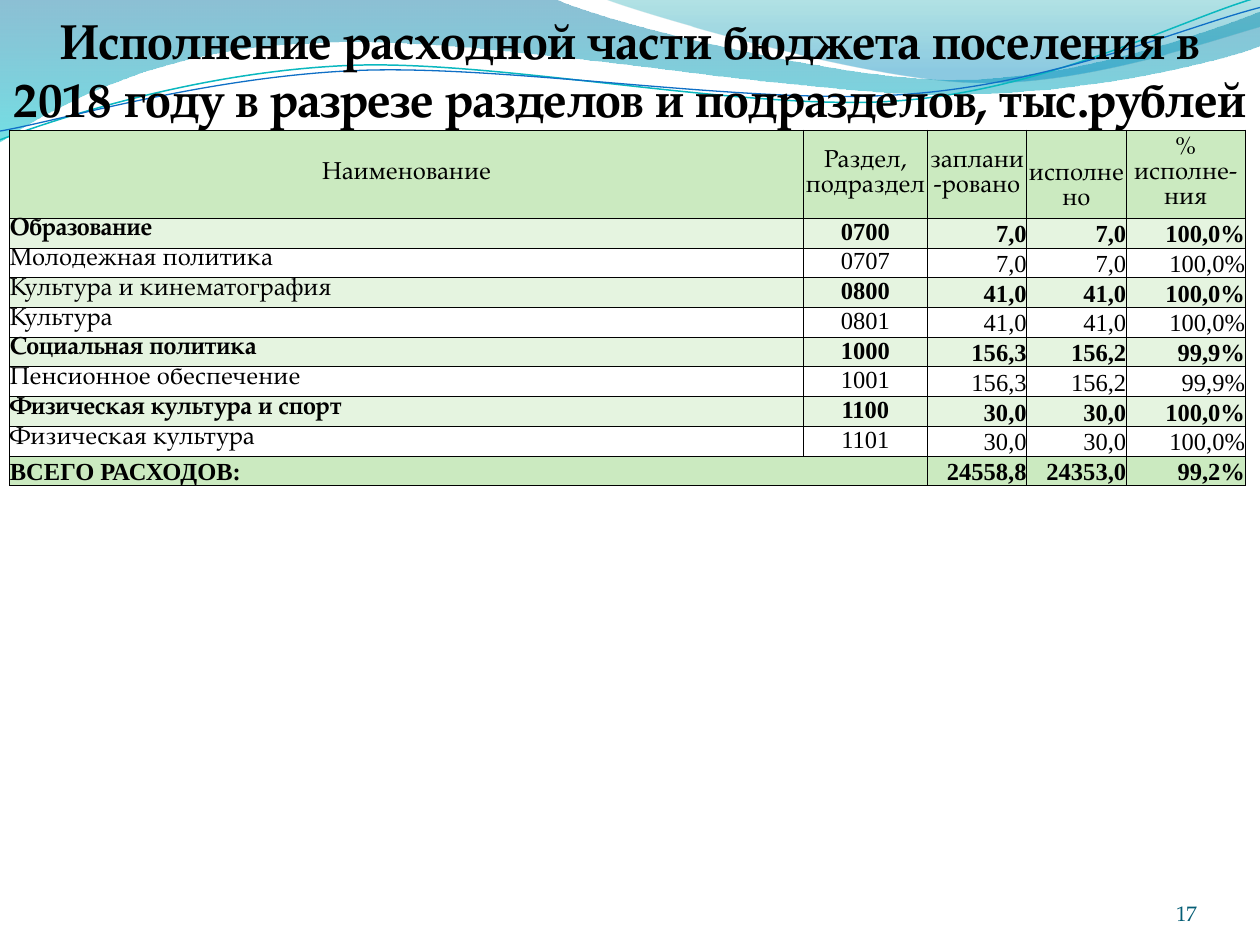
from math import cos, radians, sin

from lxml.etree import SubElement
from pptx import Presentation
from pptx.dml.color import RGBColor
from pptx.enum.text import MSO_ANCHOR, PP_ALIGN
from pptx.oxml.ns import qn
from pptx.util import Pt

HUES = {
    "ink": "000000", "head": "CBEAC0", "band": "E5F4E0", "page": "045D75",
    "deep": "0074A1", "aqua": "00C6CF", "teal": "00A1A9", "sky": "008BBF",
    "cyan": "0AB8BF", "blue": "0F6FC6",
}
SERIF, TIMES = "TeX Gyre Pagella", "Times New Roman"
LEFT, MID, RIGHT = PP_ALIGN.LEFT, PP_ALIGN.CENTER, PP_ALIGN.RIGHT
TOP, CORE, BASE = MSO_ANCHOR.TOP, MSO_ANCHOR.MIDDLE, MSO_ANCHOR.BOTTOM
TILT = -2.7


def put(item, **vals):
    for key, val in vals.items():
        setattr(item, key, val)


def hue(name):
    return RGBColor.from_string(HUES[name])


def turn(dot, hub, angle):
    x, y = dot[0] - hub[0], dot[1] - hub[1]
    c, s = cos(radians(angle)), sin(radians(angle))
    return hub[0] + x * c - y * s, hub[1] + x * s + y * c


class Deck:
    def __init__(self, wide, high):
        self.show = Presentation()
        put(self.show, slide_width=Pt(wide), slide_height=Pt(high))
        self.slide = self.show.slides.add_slide(self.show.slide_layouts[6])
        self.size = 14

    def free(self, start, parts, close):
        dots = [(Pt(x), Pt(y)) for x, y in [start, *sum(parts, [])]]
        pen = self.slide.shapes.build_freeform(*dots[0], scale=1.0)
        pen.add_line_segments(dots[1:], close=close)
        shape = pen.convert_to_shape()
        shape.shadow.inherit = False
        lines = iter(list(shape._element.spPr.iter(qn("a:lnTo"))))
        for part in parts:
            first = next(lines)
            if len(part) == 3:
                first.tag = qn("a:cubicBezTo")
                for _ in range(2):
                    line = next(lines)
                    first.append(line[0])
                    line.getparent().remove(line)
        return shape

    def wave(self, start, parts, stops):
        shape = self.free(start, parts, True)
        shape.line.fill.background()
        shape.fill.gradient()
        shape.fill.gradient_angle = 270
        for stop, (pos, name, alpha) in zip(shape.fill.gradient_stops, stops):
            stop.color.rgb = hue(name)
        nodes = shape._element.spPr.iter(qn("a:gs"))
        for node, (pos, name, alpha) in zip(nodes, stops):
            node.set("pos", str(pos * 1000))
            SubElement(node[0], qn("a:alpha")).set("val", str(alpha * 1000))

    def curl(self, start, parts, hub, name, width):
        flat = [[turn(dot, hub, -TILT) for dot in part] for part in parts]
        shape = self.free(turn(start, hub, -TILT), flat, False)
        shape.rotation = TILT
        shape.fill.background()
        shape.line.color.rgb = hue(name)
        shape.line.width = Pt(width)

    def words(self, frame, text, align, font=SERIF, size=None, bold=False, tone="ink"):
        frame.word_wrap = True
        frame.text = text
        for para in frame.paragraphs:
            para.alignment = align
            for run in para.runs:
                put(run.font, name=font, size=Pt(size or self.size), bold=bold)
                run.font.color.rgb = hue(tone)

    def text(self, box, text, align, pads=(0, 0, 0, 0), anchor=TOP, **style):
        frame = self.slide.shapes.add_textbox(*map(Pt, box)).text_frame
        left, top, right, base = map(Pt, pads)
        put(frame, margin_left=left, margin_top=top, margin_right=right,
            margin_bottom=base, vertical_anchor=anchor)
        self.words(frame, text, align, **style)

    def cell(self, cell, text, align, anchor, fill=None, top=0, **style):
        put(cell, margin_left=0, margin_right=0, margin_top=Pt(top),
            margin_bottom=0, vertical_anchor=anchor)
        self.words(cell.text_frame, text, align, **style)
        props = cell._tc.get_or_add_tcPr()
        for side in ("lnL", "lnR", "lnT", "lnB"):
            line = SubElement(props, qn("a:" + side), w=str(Pt(0.5)))
            solid = SubElement(line, qn("a:solidFill"))
            SubElement(solid, qn("a:srgbClr"), val=HUES["ink"])
        if fill:
            cell.fill.solid()
            cell.fill.fore_color.rgb = hue(fill)
        else:
            cell.fill.background()

    def table(self, left, top, cols, rows):
        grid = self.slide.shapes.add_table(
            len(rows), len(cols), Pt(left), Pt(top), Pt(sum(cols)), Pt(sum(rows))).table
        put(grid, first_row=False, horz_banding=False)
        for col, width in zip(grid.columns, cols):
            col.width = Pt(width)
        for row, height in zip(grid.rows, rows):
            row.height = Pt(height)
        return grid


HEADS = ["Наименование", "Раздел, подраздел", "заплани-ровано", "исполне\vно", "% исполне-ния"]
DATA = [
    ("Образование", "0700", "7,0", "7,0", "100,0%"),
    ("Молодежная политика", "0707", "7,0", "7,0", "100,0%"),
    ("Культура и кинематография", "0800", "41,0", "41,0", "100,0%"),
    ("Культура", "0801", "41,0", "41,0", "100,0%"),
    ("Социальная политика", "1000", "156,3", "156,2", "99,9%"),
    ("Пенсионное обеспечение", "1001", "156,3", "156,2", "99,9%"),
    ("Физическая культура и спорт", "1100", "30,0", "30,0", "100,0%"),
    ("Физическая культура", "1101", "30,0", "30,0", "100,0%"),
    ("ВСЕГО РАСХОДОВ:", "", "24558,8", "24353,0", "99,2%"),
]


def main():
    deck = Deck(720, 540)
    deck.wave((0, 0), [
        [(316.8, -0.7)],
        [(342.7, 12.2), (478, 45.4), (545.8, 45.4)],
        [(614.2, 45.4), (689.8, 18.7), (720, 6.5)],
        [(720.7, 25.9)],
        [(707.8, 31.7), (626.4, 54.7), (537.1, 54)],
        [(447.8, 54), (275, 20.2), (185, 24.5)],
        [(92.9, 25.9), (33.1, 59.8), (-0.7, 81.4)],
    ], [(0, "deep", 45), (100, "aqua", 55)])
    deck.wave((344.9, -0.7), [
        [(366.5, 7.9), (491, 44.6), (553.7, 46.8)],
        [(616.3, 49.7), (691.9, 23), (720, 15.1)],
        [(720, 0)],
    ], [(0, "teal", 30), (80, "sky", 45)])
    deck.curl((0, 79.9), [
        [(34.6, 67), (113.8, 41), (199.4, 37.4)],
        [(284.4, 33.8), (427, 64.1), (513.4, 57.6)],
        [(599.8, 51.1), (675.4, 10.8), (718.6, -1.4)],
    ], (359.3, 41.4), "cyan", 0.85)
    deck.curl((0, 74.9), [
        [(33.8, 69.1), (118.1, 43.9), (203.8, 40.3)],
        [(290.2, 36.7), (429.8, 60.5), (516.2, 54)],
        [(601.9, 48.2), (677.5, 15.1), (720, 4.3)],
    ], (359.6, 42.5), "blue", 0.75)
    deck.text((0, 0, 720, 110.9),
              "Исполнение расходной части бюджета поселения в 2018 году "
              "в разрезе разделов и подразделов, тыс.рублей",
              MID, pads=(7.2, 5.76, 7.2, 3.6), size=28, bold=True)

    grid = deck.table(5.6, 74.3, [453.6, 70.6, 56.9, 56.9, 67.9],
                      [50.3] + [16.98] * len(DATA))
    for col, text in enumerate(HEADS):
        deck.cell(grid.cell(0, col), text, MID, CORE, fill="head",
                  top=15 if "\v" in text else 0)
    last = len(DATA)
    grid.cell(last, 0).merge(grid.cell(last, 1))
    for row, line in enumerate(DATA, 1):
        total, group = row == last, row % 2 == 1
        fill = "head" if total else "band" if group else None
        for col, text in enumerate(line):
            style = {"font": TIMES, "bold": group}
            if col == 0 and not total:
                style = {"font": SERIF, "bold": group and row != 3}
            align = (LEFT, MID, RIGHT)[min(col, 2)]
            anchor = BASE if total or col > 1 else TOP
            deck.cell(grid.cell(row, col), text, align, anchor, fill, **style)

    deck.text((624.2, 500.4, 59.8, 28.8), "17", RIGHT, anchor=BASE, size=12, tone="page")
    deck.show.save("out.pptx")


if __name__ == "__main__":
    main()
